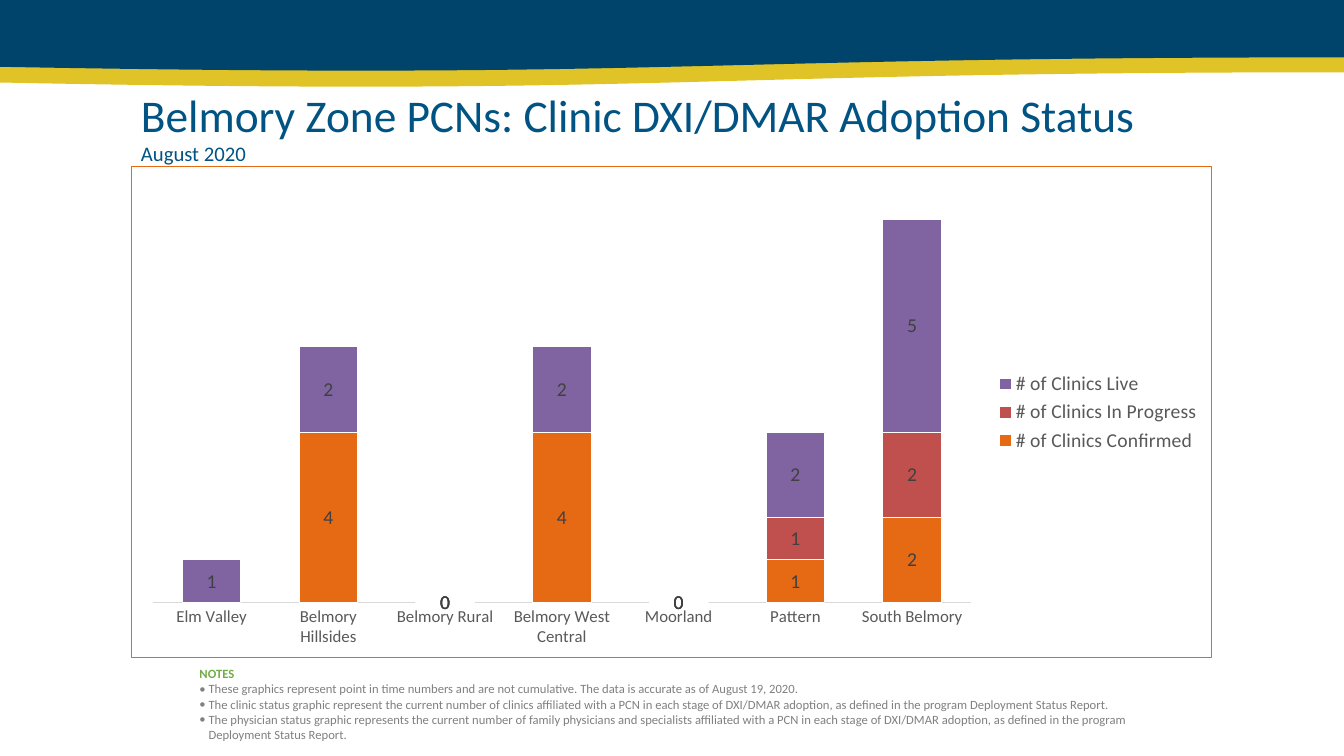
from lxml import etree
from pptx import Presentation
from pptx.chart.data import CategoryChartData
from pptx.dml.color import RGBColor
from pptx.enum.chart import XL_CHART_TYPE, XL_LABEL_POSITION, XL_LEGEND_POSITION, XL_TICK_MARK
from pptx.enum.shapes import MSO_SHAPE
from pptx.enum.text import MSO_ANCHOR, MSO_AUTO_SIZE
from pptx.oxml import parse_xml
from pptx.oxml.ns import nsdecls, qn
from pptx.util import Inches, Pt

WAVE = MSO_SHAPE.FLOWCHART_DOCUMENT
STACKED = XL_CHART_TYPE.COLUMN_STACKED
CENTER = XL_LABEL_POSITION.CENTER
LEGEND_RIGHT = XL_LEGEND_POSITION.RIGHT
NO_TICK = XL_TICK_MARK.NONE
MIDDLE, TOP = MSO_ANCHOR.MIDDLE, MSO_ANCHOR.TOP
GROW = MSO_AUTO_SIZE.SHAPE_TO_FIT_TEXT

FONT = "Calibri"
COLORS = {
    "yellow": "DFC327", "navy": "00446C", "title": "005382", "orange": "E66914",
    "red": "C0504D", "purple": "8064A2", "white": "FFFFFF", "axis": "D9D9D9",
    "black": "000000", "label": "404040", "text": "595959", "green": "70AD47",
    "note": "808080",
}
PCNS = ["Elm Valley", "Belmory Hillsides", "Belmory Rural", "Belmory West Central",
        "Moorland", "Pattern", "South Belmory"]
# name, values, colour, points without a label
STATUSES = [
    ("# of Clinics Confirmed", [0, 4, 0, 4, 0, 1, 2], "orange", [0]),
    ("# of Clinics In Progress", [0, 0, 0, 0, 0, 1, 2], "red", [0, 1, 3]),
    ("# of Clinics Live", [1, 2, 0, 2, 0, 2, 5], "purple", []),
]
NOTES = [
    "These graphics represent point in time numbers and are not cumulative. "
    "The data is accurate as of August 19, 2020.",
    "The clinic status graphic represent the current number of clinics affiliated with a PCN "
    "in each stage of DXI/DMAR adoption, as defined in the program Deployment Status Report.",
    "The physician status graphic represents the current number of family physicians and "
    "specialists affiliated with a PCN in each stage of DXI/DMAR adoption, as defined in the "
    "program Deployment Status Report.",
]


def rgb(color):
    return RGBColor.from_string(COLORS[color])


def box(left, top, width, height):
    return Inches(left), Inches(top), Inches(width), Inches(height)


class SlideBuilder:
    def __init__(self, slide):
        self.slide = slide

    def style(self, font, size, color, bold=False):
        font.name, font.size, font.bold = FONT, Pt(size), bold
        font.color.rgb = rgb(color)

    def wave(self, top, height, color):
        shape = self.slide.shapes.add_shape(WAVE, *box(0, top, 13.33, height))
        shape.shadow.inherit = False
        shape.fill.solid()
        shape.fill.fore_color.rgb = rgb(color)
        shape.line.fill.background()

    def text_box(self, place, anchor):
        frame = self.slide.shapes.add_textbox(*box(*place)).text_frame
        frame.word_wrap = True
        frame.vertical_anchor = anchor
        return frame

    def title(self, place, title, subtitle):
        paragraph = self.text_box(place, MIDDLE).paragraphs[0]
        paragraph.text = f"{title}\v{subtitle}"
        paragraph.line_spacing = 0.95
        for run, size in zip(paragraph.runs, (32.4, 14.8)):
            self.style(run.font, size, "title")

    def notes(self, place, heading, items):
        frame = self.text_box(place, TOP)
        frame.auto_size = GROW
        frame.text = "\n".join([heading, *items])
        self.style(frame.paragraphs[0].runs[0].font, 9, "green", bold=True)
        for paragraph in frame.paragraphs[1:]:
            self.style(paragraph.runs[0].font, 9, "note")
            properties = paragraph._p.get_or_add_pPr()
            properties.set("marL", str(Inches(0.09)))
            properties.set("indent", str(-Inches(0.09)))
            etree.SubElement(properties, qn("a:buFont")).set("typeface", FONT)
            etree.SubElement(properties, qn("a:buChar")).set("char", "•")

    def stacked_chart(self, place, categories, statuses):
        data = CategoryChartData(number_format="0")
        data.categories = categories
        for name, values, *_ in statuses:
            data.add_series(name, values)
        chart = self.slide.shapes.add_chart(STACKED, *box(*place), data).chart
        self.style(chart.font, 10, "black")
        chart.has_title = False
        chart.has_legend = True
        chart.legend.position = LEGEND_RIGHT
        chart.legend.include_in_layout = False
        self.style(chart.legend.font, 14, "text")

        axis = chart.category_axis
        axis.major_tick_mark = axis.minor_tick_mark = NO_TICK
        axis.format.line.color.rgb = rgb("axis")
        axis.format.line.width = Pt(0.75)
        self.style(axis.tick_labels.font, 12, "text")
        values_axis = chart.value_axis
        values_axis.visible = False
        values_axis.has_major_gridlines = False
        values_axis.minimum_scale, values_axis.maximum_scale = 0, 10

        plot = chart.plots[0]
        plot.gap_width, plot.overlap = 100, 100
        plot.vary_by_categories = False
        for series, (_, _, color, unlabelled) in zip(plot.series, statuses):
            self.style_series(series, color, unlabelled)
        self.frame_chart(chart, "white", "orange")
        self.place_plot(chart, x=0.02, y=0.02, w=0.757, h=0.868)

    def style_series(self, series, color, unlabelled):
        series.format.fill.solid()
        series.format.fill.fore_color.rgb = rgb(color)
        series.format.line.color.rgb = rgb("white")
        series.format.line.width = Pt(0.75)
        labels = series.data_labels
        labels.show_value = True
        labels.position = CENTER
        labels.number_format, labels.number_format_is_linked = "0", False
        self.style(labels.font, 14, "label")
        for position, index in enumerate(unlabelled):
            labels._element.insert(position, parse_xml(
                f'<c:dLbl {nsdecls("c")}><c:idx val="{index}"/><c:delete val="1"/></c:dLbl>'))

    def frame_chart(self, chart, fill, border):
        chart._chartSpace.find(qn("c:chart")).addnext(parse_xml(
            f'<c:spPr {nsdecls("c", "a")}>'
            f'<a:solidFill><a:srgbClr val="{COLORS[fill]}"/></a:solidFill>'
            f'<a:ln w="{Pt(0.75)}"><a:solidFill><a:srgbClr val="{COLORS[border]}"/>'
            '</a:solidFill></a:ln></c:spPr>'))

    def place_plot(self, chart, **fractions):
        """Fix the inner plot area as fractions of the chart frame."""
        plot_area = chart._chartSpace.find(f'{qn("c:chart")}/{qn("c:plotArea")}')
        for layout in plot_area.findall(qn("c:layout")):
            plot_area.remove(layout)
        sizes = "".join(f'<c:{key} val="{value}"/>' for key, value in fractions.items())
        plot_area.insert(0, parse_xml(
            f'<c:layout {nsdecls("c")}><c:manualLayout><c:layoutTarget val="inner"/>'
            f'<c:xMode val="edge"/><c:yMode val="edge"/>{sizes}'
            '</c:manualLayout></c:layout>'))


def main():
    presentation = Presentation()
    presentation.slide_width, presentation.slide_height = Inches(13.33), Inches(7.5)
    builder = SlideBuilder(presentation.slides.add_slide(presentation.slide_layouts[6]))
    builder.wave(0.1, 0.77, "yellow")
    builder.wave(0, 0.71, "navy")
    builder.title((1.3, 0.9, 11.21, 0.75),
                  "Belmory Zone PCNs: Clinic DXI/DMAR Adoption Status", "August 2020")
    builder.stacked_chart((1.3, 1.65, 10.72, 4.88), PCNS, STATUSES)
    builder.notes((1.88, 6.56, 9.58, 0.86), "NOTES", NOTES)
    presentation.save("out.pptx")


if __name__ == "__main__":
    main()
